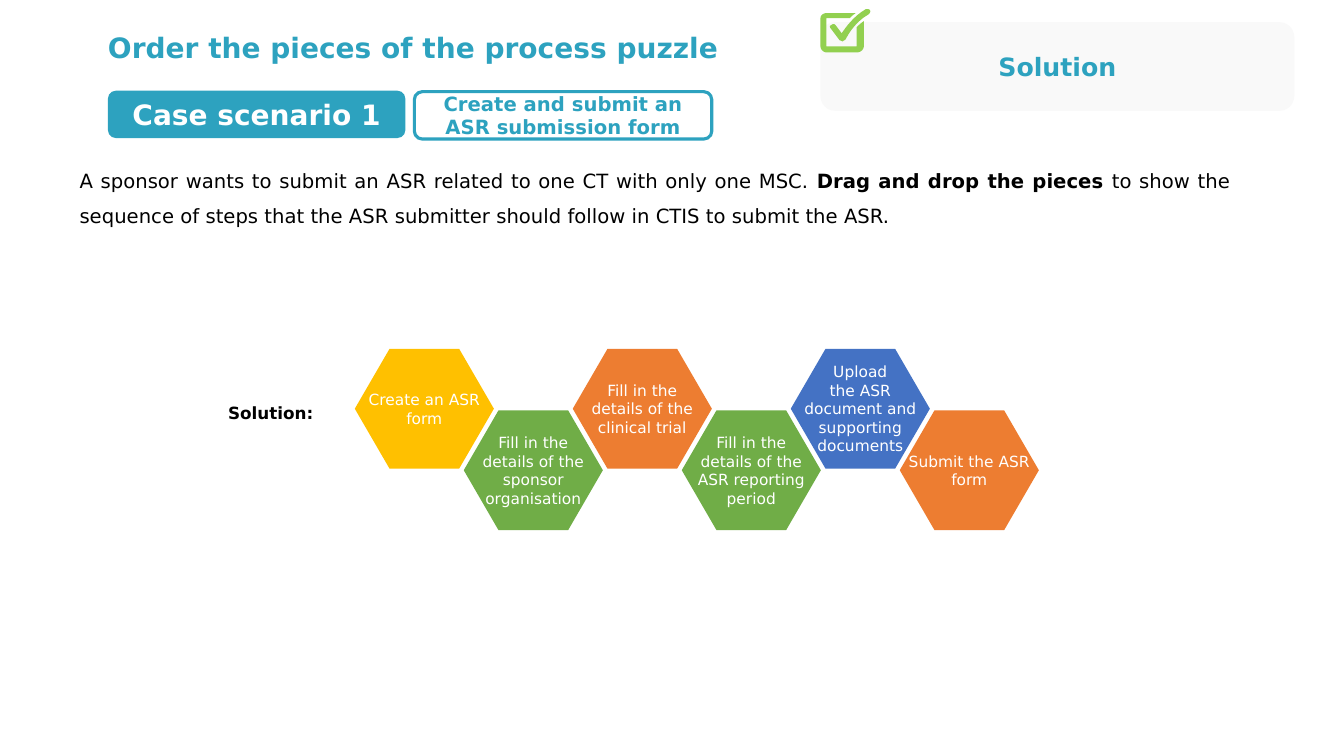
from dataclasses import dataclass
from typing import Optional

from pptx import Presentation
from pptx.dml.color import RGBColor
from pptx.enum.shapes import MSO_SHAPE
from pptx.enum.text import MSO_ANCHOR, MSO_AUTO_SIZE, PP_ALIGN
from pptx.util import Inches, Pt

ROUNDED = MSO_SHAPE.ROUNDED_RECTANGLE
TOP, MIDDLE = MSO_ANCHOR.TOP, MSO_ANCHOR.MIDDLE
LEFT, CENTER, JUSTIFY = PP_ALIGN.LEFT, PP_ALIGN.CENTER, PP_ALIGN.JUSTIFY
NO_AUTOFIT, GROW = MSO_AUTO_SIZE.NONE, MSO_AUTO_SIZE.SHAPE_TO_FIT_TEXT

FONT = "DejaVu Sans"
BLACK = RGBColor(0x00, 0x00, 0x00)
WHITE = RGBColor(0xFF, 0xFF, 0xFF)
TEAL = RGBColor(0x2D, 0xA2, 0xBF)
PALE_GREY = RGBColor(0xF9, 0xF9, 0xF9)
LIME = RGBColor(0x92, 0xD0, 0x50)
GOLD = RGBColor(0xFF, 0xC0, 0x00)
GREEN = RGBColor(0x70, 0xAD, 0x47)
ORANGE = RGBColor(0xED, 0x7D, 0x31)
BLUE = RGBColor(0x44, 0x72, 0xC4)

SLIDE_WIDTH, SLIDE_HEIGHT = Inches(13.33), Inches(7.5)


@dataclass(frozen=True)
class Box:
    """A place in percent of the slide's width and height."""
    left: float
    top: float
    width: float
    height: float

    def emu(self) -> tuple[int, int, int, int]:
        return (int(SLIDE_WIDTH * self.left / 100), int(SLIDE_HEIGHT * self.top / 100),
                int(SLIDE_WIDTH * self.width / 100), int(SLIDE_HEIGHT * self.height / 100))


@dataclass(frozen=True)
class Panel:
    text: str
    box: Box
    size: int
    color: RGBColor
    fill: Optional[RGBColor] = None
    outline: Optional[RGBColor] = None


@dataclass(frozen=True)
class Step:
    text: str
    fill: RGBColor


TITLE = "Order the pieces of the process puzzle"
TITLE_BOX = Box(7.28, 3.33, 50.55, 5.87)
TASK_BOX = Box(5.18, 20.13, 87.08, 10.13)
TASK_PARTS = [
    ("A sponsor wants to submit an ASR related to one CT with only one MSC. ", False),
    ("Drag and drop the pieces ", True),
    ("to show the sequence of steps that the ASR submitter should follow in CTIS "
     "to submit the ASR.", False),
]
PANELS = [
    Panel("Solution:", Box(15.15, 50, 9.98, 9.33), 12, BLACK),
    Panel("Case scenario 1", Box(8.03, 12, 22.13, 6.27), 20, WHITE, fill=TEAL),
    Panel("Create and submit an ASR submission form", Box(30.83, 12.13, 22.13, 6.27),
          14, TEAL, outline=TEAL),
    Panel("Solution", Box(61.05, 2.93, 35.25, 11.73), 18, TEAL, fill=PALE_GREY),
]
STEPS = [
    Step("Create an ASR form", GOLD),
    Step("Fill in the details of the sponsor organisation", GREEN),
    Step("Fill in the details of the clinical trial", ORANGE),
    Step("Fill in the details of the ASR reporting period", GREEN),
    Step("Upload\nthe ASR document and supporting documents", BLUE),
    Step("Submit the ASR form", ORANGE),
]
FIRST_STEP = Box(26.4, 46.13, 10.35, 15.87)
STEP_PITCH, STEP_DROP = 8.11, 8.14
HEXAGON = [(0.25, 0), (0.75, 0), (1, 0.5), (0.75, 1), (0.25, 1), (0, 0.5)]

# Icon outlines in icon cells: a pair is a corner, six numbers are a cubic curve.
ICON_LEFT, ICON_TOP, _, _ = Box(61.05, 1.2, 0, 0).emu()
ICON_CELL = SLIDE_HEIGHT // 750
CURVE_PARTS = 8
TICK = [(46, 0), (46, 0, 45, 0, 45, 0), (33, 7, 25, 18, 21, 24), (15, 16),
        (14, 15, 14, 15, 13, 15), (12, 15, 11, 15, 11, 16), (9, 16, 9, 18, 10, 19),
        (19, 31), (20, 31, 21, 32, 22, 32), (23, 31, 24, 31, 25, 30),
        (25, 30, 32, 14, 48, 5), (49, 4, 50, 2, 49, 1), (48, 0, 47, 0, 46, 0)]
CHECKBOX = [(36, 18), (36, 37), (6, 37), (6, 9), (29, 9), (30, 8, 32, 6, 35, 4), (6, 4),
            (3, 4, 0, 6, 0, 9), (0, 37), (0, 40, 3, 43, 6, 43), (36, 43),
            (40, 43, 43, 40, 43, 37), (43, 12), (40, 14, 38, 16, 36, 18)]


def format_runs(paragraph, size: int, color: RGBColor, bold: bool) -> None:
    for run in paragraph.runs:
        run.font.name, run.font.size, run.font.bold = FONT, Pt(size), bold
        run.font.color.rgb = color


def write(shape, text: str, size: int, color: RGBColor, bold: bool,
          align=CENTER, anchor=MIDDLE) -> None:
    frame = shape.text_frame
    frame.text = text
    frame.word_wrap = True
    frame.vertical_anchor = anchor
    for paragraph in frame.paragraphs:
        paragraph.alignment = align
        format_runs(paragraph, size, color, bold)


def paint(shape, fill: Optional[RGBColor], outline: Optional[RGBColor] = None) -> None:
    shape.shadow.inherit = False
    if fill is None:
        shape.fill.background()
    else:
        shape.fill.solid()
        shape.fill.fore_color.rgb = fill
    if outline is None:
        shape.line.fill.background()
    else:
        shape.line.color.rgb = outline
        shape.line.width = Pt(2.25)


def add_outline(shapes, points: list[tuple[float, float]], fill: RGBColor):
    builder = shapes.build_freeform(*points[0])
    builder.add_line_segments(points[1:], close=True)
    shape = builder.convert_to_shape()
    paint(shape, fill)
    return shape


def flatten(outline: list[tuple]) -> list[tuple[float, float]]:
    """Turn icon cells into slide points, with each curve cut into short lines."""
    points = []
    for piece in outline:
        if len(piece) == 2:
            points.append(piece)
            continue
        controls = [points[-1], piece[:2], piece[2:4], piece[4:]]
        for part in range(1, CURVE_PARTS + 1):
            t = part / CURVE_PARTS
            weights = ((1 - t) ** 3, 3 * t * (1 - t) ** 2, 3 * t ** 2 * (1 - t), t ** 3)
            points.append(tuple(sum(w * c[axis] for w, c in zip(weights, controls))
                                for axis in (0, 1)))
    return [(ICON_LEFT + x * ICON_CELL, ICON_TOP + y * ICON_CELL) for x, y in points]


def add_title(slide) -> None:
    title = slide.shapes.title
    title.left, title.top, title.width, title.height = TITLE_BOX.emu()
    write(title, TITLE, 20, TEAL, True, LEFT, TOP)
    title.text_frame.auto_size = NO_AUTOFIT


def add_task(slide) -> None:
    frame = slide.shapes.add_textbox(*TASK_BOX.emu()).text_frame
    frame.word_wrap = True
    frame.auto_size = GROW
    paragraph = frame.paragraphs[0]
    paragraph.alignment, paragraph.line_spacing = JUSTIFY, 1.5
    for text, _ in TASK_PARTS:
        paragraph.add_run().text = text
    format_runs(paragraph, 14, BLACK, False)
    for run, (_, bold) in zip(paragraph.runs, TASK_PARTS):
        run.font.bold = bold


def add_panel(slide, panel: Panel) -> None:
    shape = slide.shapes.add_shape(ROUNDED, *panel.box.emu())
    paint(shape, panel.fill, panel.outline)
    write(shape, panel.text, panel.size, panel.color, True)


def add_step(slide, index: int, step: Step) -> None:
    left, top, width, height = Box(FIRST_STEP.left + index * STEP_PITCH,
                                   FIRST_STEP.top + index % 2 * STEP_DROP,
                                   FIRST_STEP.width, FIRST_STEP.height).emu()
    corners = [(left + x * width, top + y * height) for x, y in HEXAGON]
    hexagon = add_outline(slide.shapes, corners, step.fill)
    write(hexagon, step.text, 11, WHITE, False)
    frame = hexagon.text_frame
    frame.margin_left = frame.margin_right = Inches(0.08)
    frame.margin_top = frame.margin_bottom = Inches(0.05)


def main() -> None:
    deck = Presentation()
    deck.slide_width, deck.slide_height = SLIDE_WIDTH, SLIDE_HEIGHT
    slide = deck.slides.add_slide(deck.slide_layouts.get_by_name("Title Only"))
    add_title(slide)
    add_task(slide)
    for panel in PANELS:
        add_panel(slide, panel)
    icon = slide.shapes.add_group_shape()
    for outline in (TICK, CHECKBOX):
        add_outline(icon.shapes, flatten(outline), LIME)
    for index, step in enumerate(STEPS):
        add_step(slide, index, step)
    deck.save("out.pptx")


if __name__ == "__main__":
    main()
